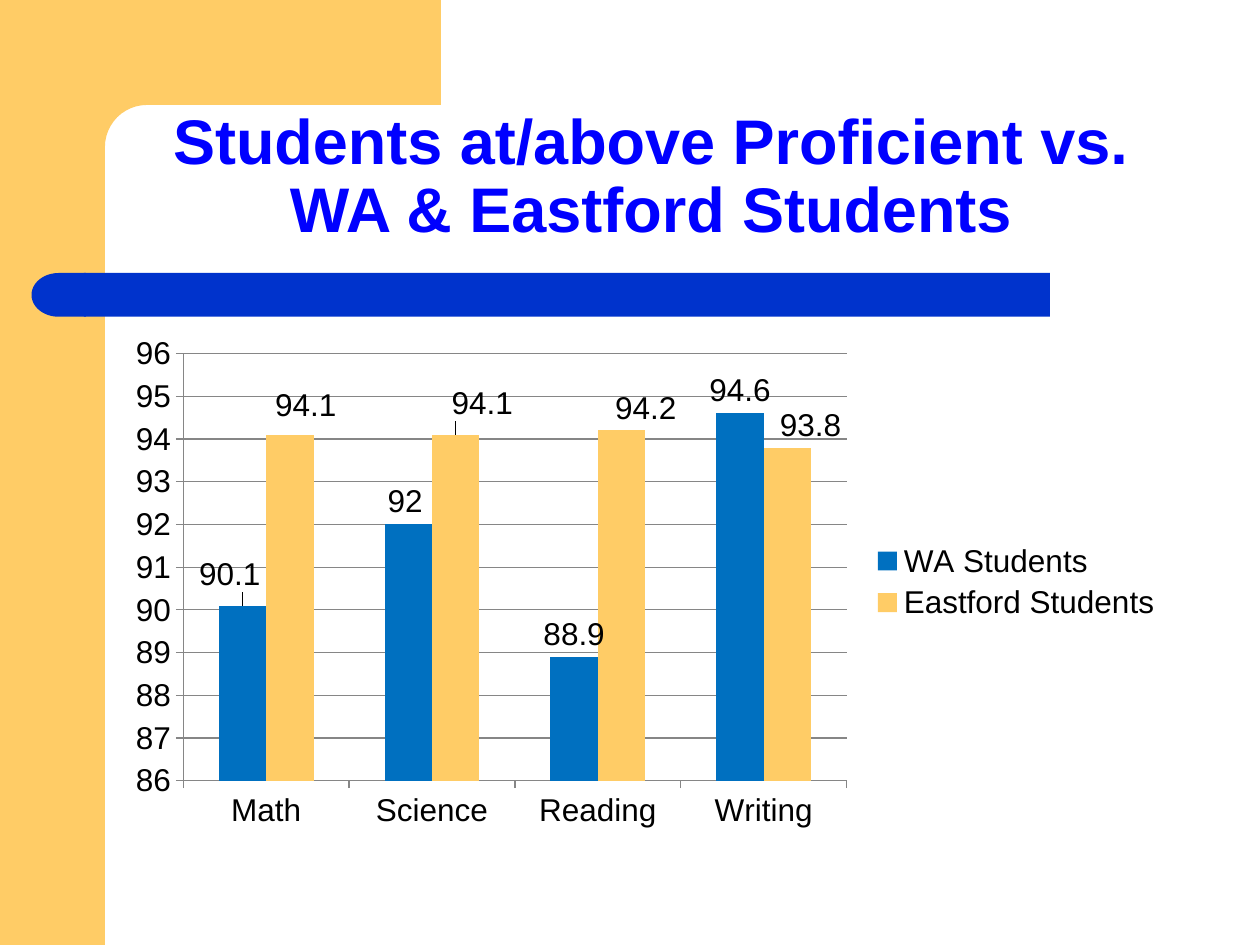
import math

import lxml.etree
import pptx
import pptx.chart.data
import pptx.dml.color
import pptx.enum.chart
import pptx.enum.shapes
import pptx.enum.text
import pptx.oxml.ns
import pptx.util

Pt = pptx.util.Pt
SHAPES = pptx.enum.shapes.MSO_SHAPE
GOLD, NAVY, BLUE, GRAY = "FFCC66", "0033CC", "0070C0", "868686"

SUBJECTS = ["Math", "Science", "Reading", "Writing"]
# Name, colour, values, and label shifts as fractions of the chart size
SERIES = [
    ("WA Students", BLUE, [90.1, 92, 88.9, 94.6],
     {0: (-0.012, -0.016), 1: (-0.003, 0)}),
    ("Eastford Students", GOLD, [94.1, 94.1, 94.2, 93.8],
     {0: (0.015, -0.013), 1: (0.025, -0.017), 2: (0.023, 0), 3: (0.022, 0)}),
]


def color(value):
    return pptx.dml.color.RGBColor.from_string(value)


def paint(shape, fill):
    shape.fill.solid()
    shape.fill.fore_color.rgb = color(fill)
    shape.line.fill.background()
    shape.shadow.inherit = False


def add_block(page, kind, box, fill):
    shape = page.shapes.add_shape(kind, *map(Pt, box))
    paint(shape, fill)
    return shape


def add_frame(page, left, top, width, height):
    """Gold side band and top band, joined by a rounded inner corner."""
    side, bar, radius, overlap = 60, 60, 24, 24
    add_block(page, SHAPES.RECTANGLE, (left, top, side, height), GOLD)
    x, y = left + side, top + bar
    steps = 12
    angles = [math.pi / 2 * step / steps for step in range(steps + 1)]
    corner = [(x + radius * (1 - math.sin(a)), y + radius * (1 - math.cos(a)))
              for a in angles]
    outline = [(left + width, y), *corner, (x, y + 32),
               (x - overlap, y + 32), (x - overlap, top)]
    builder = page.shapes.build_freeform(Pt(left + width), Pt(top))
    builder.add_line_segments([(Pt(a), Pt(b)) for a, b in outline])
    paint(builder.convert_to_shape(), GOLD)


def add_rule(page, left, top, width, height):
    """Blue bar with a round left end."""
    cap = 31
    add_block(page, SHAPES.RECTANGLE,
              (left + cap - 1, top, width - cap + 1, height), NAVY)
    end = add_block(page, SHAPES.FLOWCHART_DELAY, (left, top, cap, height), NAVY)
    end.rotation = 180


def set_title(page, left, top, width, height):
    title = page.shapes.title
    title.left, title.top, title.width, title.height = map(
        Pt, (left, top, width, height))
    frame = title.text_frame
    frame.word_wrap = True
    frame.auto_size = pptx.enum.text.MSO_AUTO_SIZE.NONE
    frame.vertical_anchor = pptx.enum.text.MSO_ANCHOR.BOTTOM
    frame.margin_left = frame.margin_right = Pt(13)
    frame.margin_bottom = Pt(9.3)
    para = frame.paragraphs[0]
    para.alignment = pptx.enum.text.PP_ALIGN.CENTER
    para.line_spacing = 0.9
    para.space_before = Pt(0)
    span = para.add_run()
    span.text = "Students at/above Proficient vs. WA & Eastford Students"
    span.font.name, span.font.size, span.font.bold = "Arial", Pt(36), True
    span.font.color.rgb = color("0000FF")


def add_layout(parent, index, **settings):
    """Insert a manual chart layout as the child at the given index."""
    tag = pptx.oxml.ns.qn
    for old in parent.findall(tag("c:layout")):
        parent.remove(old)
    layout = lxml.etree.Element(tag("c:layout"))
    manual = lxml.etree.SubElement(layout, tag("c:manualLayout"))
    for name, value in settings.items():
        lxml.etree.SubElement(manual, tag("c:" + name)).set("val", str(value))
    parent.insert(index, layout)


def format_axis(axis):
    axis.major_tick_mark = pptx.enum.chart.XL_TICK_MARK.OUTSIDE
    axis.minor_tick_mark = pptx.enum.chart.XL_TICK_MARK.NONE
    axis.format.line.color.rgb = color(GRAY)
    axis.format.line.width = Pt(0.75)


def format_series(series, fill, shifts):
    series.format.fill.solid()
    series.format.fill.fore_color.rgb = color(fill)
    series.invert_if_negative = False
    outside = pptx.enum.chart.XL_LABEL_POSITION.OUTSIDE_END
    labels = series.data_labels
    labels.show_value = True
    labels.position = outside
    for index in shifts:
        series.points[index].data_label.position = outside
    for label, (x, y) in zip(series._element.xpath("c:dLbls/c:dLbl"),
                             shifts.values()):
        add_layout(label, 1, x=x, y=y)


def add_scores(page, left, top, width, height):
    data = pptx.chart.data.CategoryChartData()
    data.categories = SUBJECTS
    for name, _, values, _ in SERIES:
        data.add_series(name, values)
    chart = page.shapes.add_chart(
        pptx.enum.chart.XL_CHART_TYPE.COLUMN_CLUSTERED,
        *map(Pt, (left, top, width, height)), data).chart
    chart.font.name, chart.font.size = "Arial", Pt(18)
    chart.font.color.rgb = color("000000")
    chart.has_title = False
    chart.has_legend = True
    chart.legend.position = pptx.enum.chart.XL_LEGEND_POSITION.RIGHT
    chart.legend.include_in_layout = False

    format_axis(chart.category_axis)
    scale = chart.value_axis
    format_axis(scale)
    scale.minimum_scale, scale.maximum_scale, scale.major_unit = 86, 96, 1
    scale.has_major_gridlines = True
    scale.major_gridlines.format.line.color.rgb = color(GRAY)
    scale.major_gridlines.format.line.width = Pt(0.75)

    plot = chart.plots[0]
    plot.vary_by_categories = False
    plot.gap_width, plot.overlap = 150, 0
    for series, (_, fill, _, shifts) in zip(plot.series, SERIES):
        format_series(series, fill, shifts)
    area = chart._chartSpace.xpath("c:chart/c:plotArea")[0]
    add_layout(area, 0, layoutTarget="inner", xMode="edge", yMode="edge",
               x=0.064, y=0.055, w=0.626, h=0.833)


def main():
    deck = pptx.Presentation()
    deck.slide_width, deck.slide_height = Pt(720), Pt(540)
    page = deck.slides.add_slide(deck.slide_layouts[5])
    add_frame(page, 0, 0, 252, 540)
    add_rule(page, 18, 156, 582, 25)
    set_title(page, 60, 60, 624, 90)
    add_scores(page, 66, 186, 605.5, 293)
    deck.save("out.pptx")


if __name__ == "__main__":
    main()
